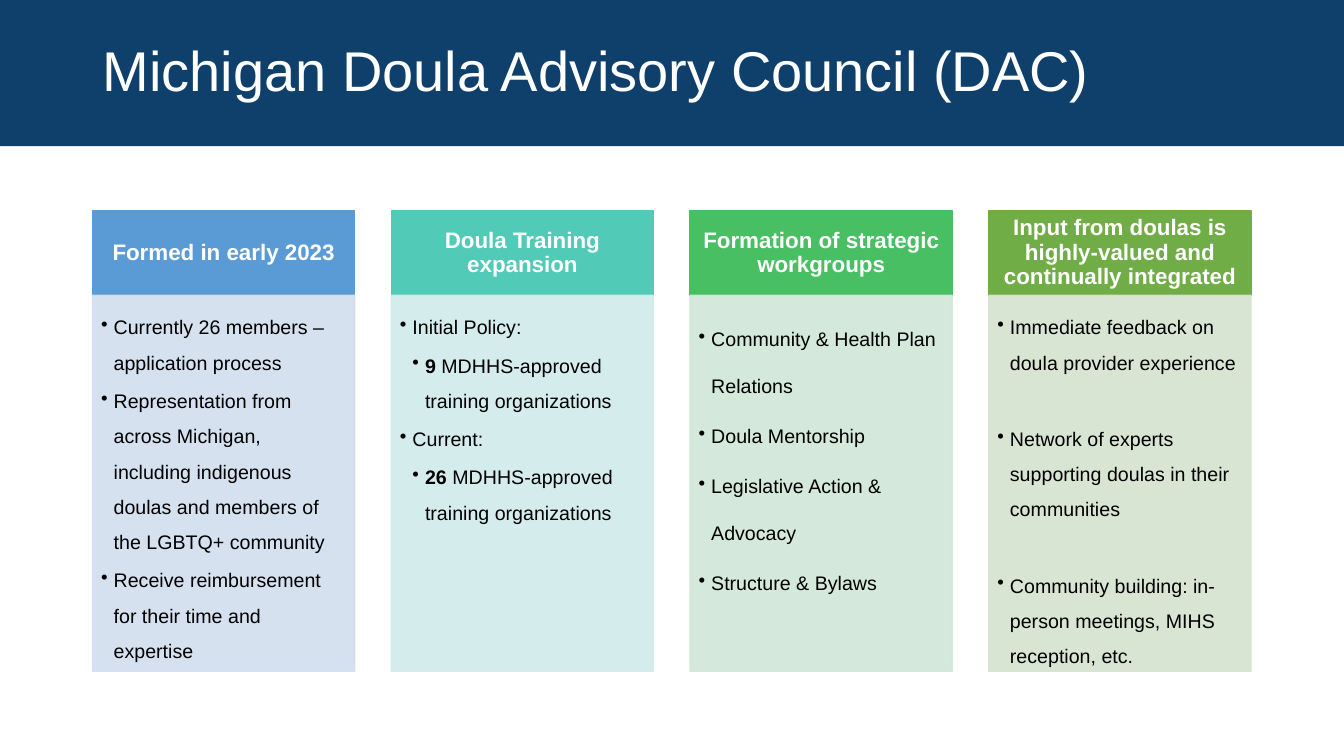
from lxml import etree
from pptx import Presentation
from pptx.dml import color
from pptx.enum import shapes, text
from pptx.oxml import ns
from pptx.util import Pt

TITLE = "Michigan Doula Advisory Council (DAC)"
COLUMNS = [
    {"head": "Formed in early 2023", "dark": "5B9BD5", "light": "D2DEEF",
     "spacing": 1.5, "gap": 2.1,
     "items": [
         (0, "", "Currently 26 members – application process"),
         (0, "", "Representation from across Michigan, including indigenous "
                 "doulas and members of the LGBTQ+ community"),
         (0, "", "Receive reimbursement for their time and expertise")]},
    {"head": "Doula Training expansion", "dark": "52CAB8", "light": "D0ECEA",
     "spacing": 1.5, "gap": 2.1,
     "items": [
         (0, "", "Initial Policy:"),
         (1, "9", " MDHHS-approved training organizations"),
         (0, "", "Current:"),
         (1, "26", " MDHHS-approved training organizations")]},
    {"head": "Formation of strategic workgroups", "dark": "49BF64", "light": "D0E7D8",
     "spacing": 2.0, "gap": 2.1,
     "items": [
         (0, "", "Community & Health Plan Relations"),
         (0, "", "Doula Mentorship"),
         (0, "", "Legislative Action & Advocacy"),
         (0, "", "Structure & Bylaws")]},
    {"head": "Input from doulas is highly-valued and continually integrated",
     "dark": "70AD47", "light": "D5E3CF",
     "spacing": 1.5, "gap": 29.2,
     "items": [
         (0, "", "Immediate feedback on doula provider experience"),
         (0, "", "Network of experts supporting doulas in their communities"),
         (0, "", "Community building: in-person meetings, MIHS reception, etc.")]},
]
THEME = {"font": "Arial", "band": "0F406B", "white": "FFFFFF", "black": "000000",
         "title": 40, "head": 16, "body": 14, "alpha": 90}

WIDTH, HEIGHT, BAND_H = 960, 540, 104.4
LEFT, COL_W, PITCH = 66.2, 187.2, 213.4
HEAD_TOP, HEAD_H, BODY_H = 150.4, 60.5, 268.6
INDENT = 9


def rgb(value):
    return color.RGBColor.from_string(value)


def add_box(sl, x, y, w, h, fill, alpha=100):
    sp = sl.shapes.add_shape(shapes.MSO_SHAPE.RECTANGLE, Pt(x), Pt(y), Pt(w), Pt(h))
    sp.shadow.inherit = False
    sp.fill.solid()
    sp.fill.fore_color.rgb = rgb(fill)
    sp.line.color.rgb = rgb(fill)
    sp.line.width = Pt(1)
    if alpha < 100:
        for clr in sp._element.spPr.iter(ns.qn("a:srgbClr")):
            etree.SubElement(clr, ns.qn("a:alpha")).set("val", str(alpha * 1000))
    return sp


def set_frame(tf, anchor, insets):
    tf.word_wrap = True
    tf.auto_size = text.MSO_AUTO_SIZE.NONE
    tf.vertical_anchor = anchor
    tf.margin_left, tf.margin_top, tf.margin_right, tf.margin_bottom = map(Pt, insets)


def add_run(p, words, size, ink, bold=False):
    r = p.add_run()
    r.text = words
    r.font.name = THEME["font"]
    r.font.size = Pt(size)
    r.font.bold = bold
    r.font.color.rgb = rgb(THEME[ink])


def set_bullet(p, level):
    pPr = p._p.get_or_add_pPr()
    pPr.set("marL", str(Pt(INDENT * (level + 1))))
    pPr.set("indent", str(-Pt(INDENT)))
    etree.SubElement(pPr, ns.qn("a:buChar")).set("char", "•")


def add_title(sl):
    band = add_box(sl, 0, 0, WIDTH, BAND_H, THEME["band"])
    band.line.fill.background()
    sp = sl.shapes.title
    sp._element.addprevious(band._element)
    sp.left, sp.top, sp.width, sp.height = Pt(LEFT), Pt(0), Pt(771), Pt(BAND_H)
    set_frame(sp.text_frame, text.MSO_ANCHOR.MIDDLE, (7.2, 3.6, 7.2, 3.6))
    p = sp.text_frame.paragraphs[0]
    p.alignment = text.PP_ALIGN.LEFT
    p.line_spacing = 0.9
    add_run(p, TITLE, THEME["title"], "white")


def add_column(sl, x, column):
    head = add_box(sl, x, HEAD_TOP, COL_W, HEAD_H, column["dark"])
    set_frame(head.text_frame, text.MSO_ANCHOR.MIDDLE, (8.96, 5.12, 8.96, 5.12))
    p = head.text_frame.paragraphs[0]
    p.alignment = text.PP_ALIGN.CENTER
    p.line_spacing = 0.9
    add_run(p, column["head"], THEME["head"], "white", True)

    body = add_box(sl, x, HEAD_TOP + HEAD_H, COL_W, BODY_H, column["light"], THEME["alpha"])
    tf = body.text_frame
    set_frame(tf, text.MSO_ANCHOR.TOP, (6, 6, 8, 9))
    for i, (level, strong, words) in enumerate(column["items"]):
        p = tf.add_paragraph() if i else tf.paragraphs[0]
        set_bullet(p, level)
        p.level = level
        p.alignment = text.PP_ALIGN.LEFT
        p.line_spacing = column["spacing"]
        p.space_after = Pt(column["gap"])
        if strong:
            add_run(p, strong, THEME["body"], "black", True)
        add_run(p, words, THEME["body"], "black")


def main():
    prs = Presentation()
    prs.slide_width, prs.slide_height = Pt(WIDTH), Pt(HEIGHT)
    sl = prs.slides.add_slide(prs.slide_layouts.get_by_name("Title Only"))
    add_title(sl)
    for i, column in enumerate(COLUMNS):
        add_column(sl, LEFT + i * PITCH, column)
    prs.save("out.pptx")


if __name__ == "__main__":
    main()
